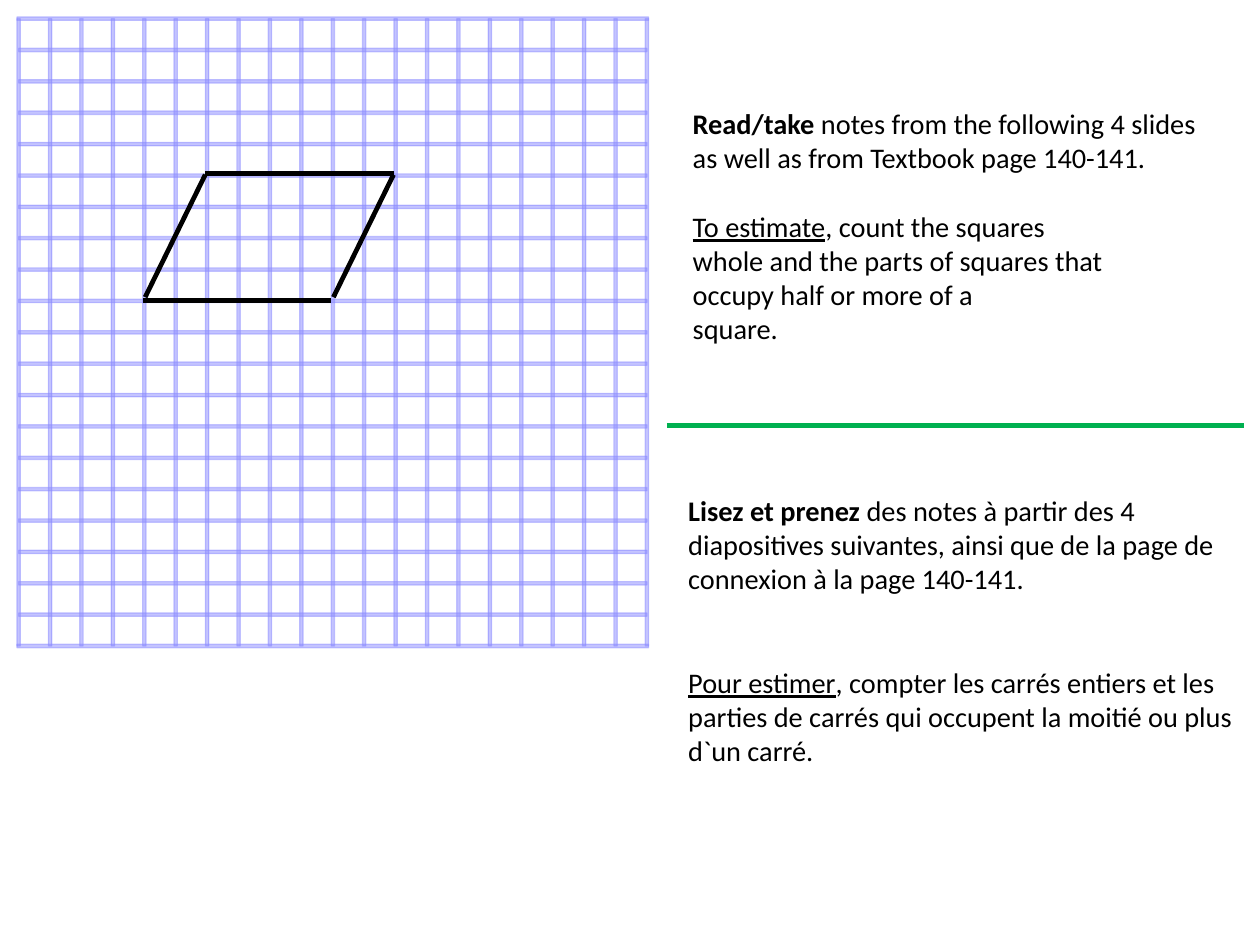
from dataclasses import dataclass

from lxml.etree import SubElement
from pptx import Presentation
from pptx.dml.color import RGBColor
from pptx.enum.shapes import MSO_CONNECTOR, MSO_SHAPE
from pptx.oxml.ns import qn
from pptx.util import Inches, Pt


@dataclass(frozen=True)
class Theme:
    font: str = "Calibri"
    text_size: int = 18
    blank_line: int = 22
    rule_width: int = 3
    ink: RGBColor = RGBColor(0x00, 0x00, 0x00)
    grid: RGBColor = RGBColor(0x8C, 0x8C, 0xFF)
    grid_alpha: int = 51
    divider: RGBColor = RGBColor(0x00, 0xB0, 0x50)


@dataclass(frozen=True)
class Box:
    left: float
    top: float
    width: float
    height: float


THEME = Theme()
GRID_CELLS = 20
BAR = 0.03

# Each paragraph is (blank lines before, [(text, style), ...]).
ENGLISH_NOTES = [
    (0, [("Read/take ", "bold"),
         ("notes from the following 4 slides as well as from Textbook page 140-141.", "")]),
    (1, [("To estimate", "underline"), (", count the squares", "")]),
    (0, [("whole and the parts of squares that", "")]),
    (0, [("occupy half or more of a", "")]),
    (0, [("square.", "")]),
]
FRENCH_NOTES = [
    (0, [("Lisez et prenez ", "bold"), ("des notes à partir des 4", "")]),
    (0, [("diapositives suivantes, ainsi que de la page de connexion à la page 140-141.", "")]),
    (2, [("Pour estimer", "underline"),
         (", compter les carrés entiers et les parties de carrés qui occupent la moitié ou plus", "")]),
    (0, [("d`un carré.", "")]),
]


def set_alpha(shape):
    for color in shape._element.spPr.iter(qn("a:srgbClr")):
        SubElement(color, qn("a:alpha")).set("val", str(THEME.grid_alpha * 1000))


def add_bar(shapes, left, top, width, height):
    bar = shapes.add_shape(MSO_SHAPE.RECTANGLE, Inches(left), Inches(top),
                           Inches(width), Inches(height))
    bar.shadow.inherit = False
    bar.fill.solid()
    bar.fill.fore_color.rgb = THEME.grid
    bar.line.color.rgb = THEME.grid
    bar.line.width = Pt(0)
    set_alpha(bar)


def add_line(shapes, start, end, color):
    line = shapes.add_connector(MSO_CONNECTOR.STRAIGHT,
                                *(Inches(value) for value in (*start, *end)))
    line.line.color.rgb = color
    line.line.width = Pt(THEME.rule_width)
    SubElement(line._element.spPr, qn("a:effectLst"))


def add_grid(slide, box):
    shapes = slide.shapes.add_group_shape().shapes
    column_step = (box.width - BAR) / GRID_CELLS
    row_step = (box.height - BAR) / GRID_CELLS
    inset = BAR / 2
    for index in range(GRID_CELLS + 1):
        add_bar(shapes, box.left + index * column_step, box.top + inset,
                BAR, box.height - BAR)
        # The top and bottom bars reach the outer corners.
        trim = 0 if index in (0, GRID_CELLS) else inset
        add_bar(shapes, box.left + trim, box.top + index * row_step,
                box.width - 2 * trim, BAR)


def add_parallelogram(slide, box):
    shapes = slide.shapes.add_group_shape().shapes
    slant = 0.55
    right, bottom = box.left + box.width, box.top + box.height
    side_top, side_bottom = box.top + 0.01, bottom - 0.03
    edges = [
        ((box.left + slant, box.top), (right, box.top)),
        ((right, side_top), (right - slant + 0.02, side_bottom)),
        ((box.left, bottom), (right - slant, bottom)),
        ((box.left + slant, side_top), (box.left + 0.02, side_bottom)),
    ]
    for start, end in edges:
        add_line(shapes, start, end, THEME.ink)


def add_notes(slide, box, paragraphs):
    text_box = slide.shapes.add_textbox(Inches(box.left), Inches(box.top),
                                        Inches(box.width), Inches(box.height))
    frame = text_box.text_frame
    frame.word_wrap = True
    for index, (blank_lines, runs) in enumerate(paragraphs):
        paragraph = frame.add_paragraph() if index else frame.paragraphs[0]
        paragraph.space_before = Pt(blank_lines * THEME.blank_line)
        for text, style in runs:
            run = paragraph.add_run()
            run.text = text
            run.font.name = THEME.font
            run.font.size = Pt(THEME.text_size)
            run.font.color.rgb = THEME.ink
            run.font.bold = style == "bold"
            run.font.underline = style == "underline"


def add_divider(slide, box):
    add_line(slide.shapes, (box.left, box.top), (box.left + box.width, box.top), THEME.divider)


def main():
    presentation = Presentation()
    presentation.slide_width = Inches(11.11)
    presentation.slide_height = Inches(8.33)
    slide = presentation.slides.add_slide(presentation.slide_layouts[6])
    add_grid(slide, Box(0.15, 0.15, 5.57, 5.56))
    add_notes(slide, Box(6.01, 0.89, 4.67, 2.22), ENGLISH_NOTES)
    add_parallelogram(slide, Box(1.26, 1.53, 2.21, 1.12))
    add_notes(slide, Box(5.97, 4.3, 5.56, 2.52), FRENCH_NOTES)
    add_divider(slide, Box(5.88, 3.75, 5.09, 0))
    presentation.save("out.pptx")


if __name__ == "__main__":
    main()
